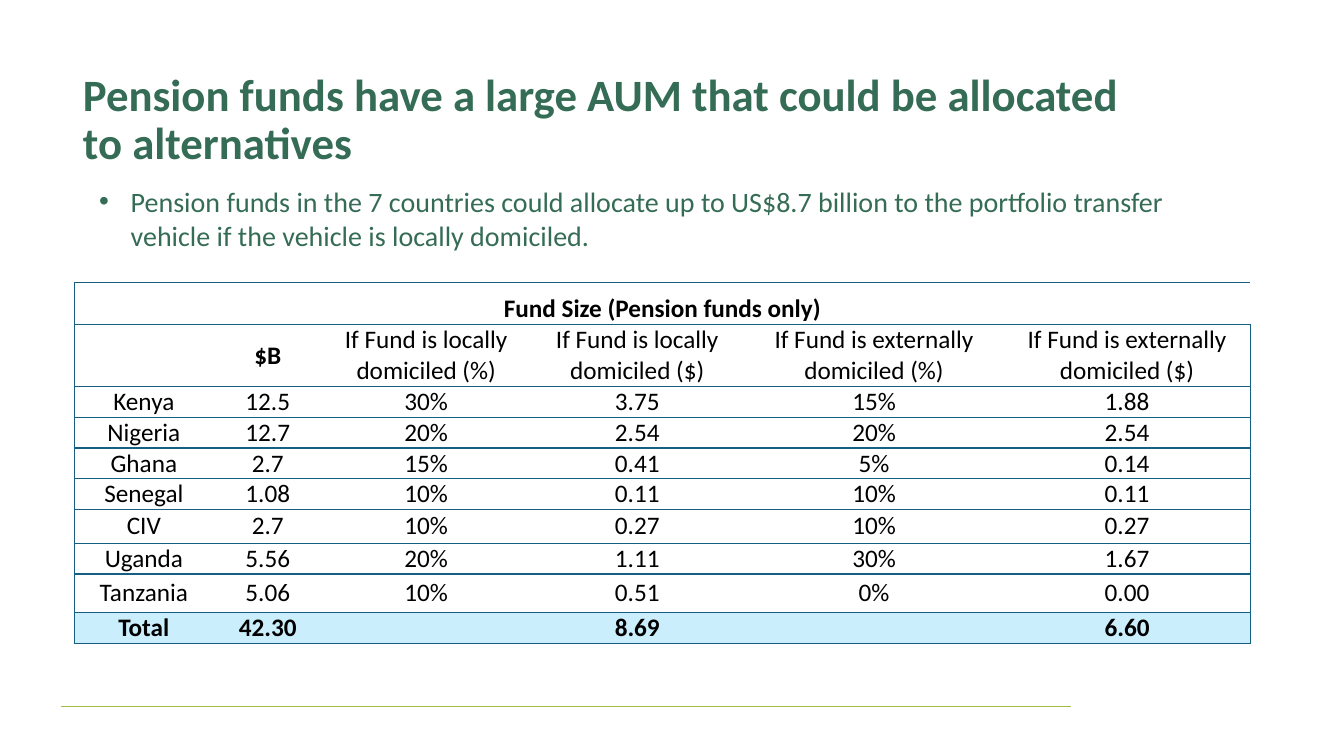
from dataclasses import dataclass

from lxml.etree import SubElement
from pptx import Presentation
from pptx.dml.color import RGBColor
from pptx.enum.shapes import MSO_CONNECTOR
from pptx.enum.text import MSO_ANCHOR, MSO_AUTO_SIZE, PP_ALIGN
from pptx.oxml import parse_xml
from pptx.oxml.ns import nsdecls, qn
from pptx.slide import Slide
from pptx.table import _Cell
from pptx.text.text import TextFrame, _Paragraph
from pptx.util import Emu, Pt

PX = 9525
COLORS = {
    "green": "356C55",
    "lime": "A0BE44",
    "blue": "156082",
    "sky": "CAEEFB",
    "white": "FFFFFF",
    "black": "000000",
}
WIDTHS = [132, 104, 198, 204, 247, 235]


@dataclass
class Row:
    high: int
    texts: list[str]
    fill: str = "white"
    bold: tuple[int, ...] = ()
    anchor: MSO_ANCHOR = MSO_ANCHOR.MIDDLE


ROWS = [
    Row(40, ["Fund Size (Pension funds only)", "", "", "", "", ""],
        bold=(0,), anchor=MSO_ANCHOR.BOTTOM),
    Row(59, ["", "$B", "If Fund is locally domiciled (%)",
             "If Fund is locally domiciled ($)",
             "If Fund is externally domiciled (%)",
             "If Fund is externally domiciled ($)"], bold=(1,)),
    Row(29, ["Kenya", "12.5", "30%", "3.75", "15%", "1.88"]),
    Row(29, ["Nigeria", "12.7", "20%", "2.54", "20%", "2.54"]),
    Row(29, ["Ghana", "2.7", "15%", "0.41", "5%", "0.14"]),
    Row(29, ["Senegal", "1.08", "10%", "0.11", "10%", "0.11"]),
    Row(32, ["CIV", "2.7", "10%", "0.27", "10%", "0.27"]),
    Row(29, ["Uganda", "5.56", "20%", "1.11", "30%", "1.67"]),
    Row(37, ["Tanzania", "5.06", "10%", "0.51", "0%", "0.00"]),
    Row(29, ["Total", "42.30", "", "8.69", "", "6.60"],
        fill="sky", bold=(0, 1, 3, 5)),
]


def px(count: int) -> Emu:
    return Emu(count * PX)


def shade(name: str) -> RGBColor:
    return RGBColor.from_string(COLORS[name])


def write(frame: TextFrame, text: str, *, size: int, color: str,
          bold: bool = False, align: PP_ALIGN = PP_ALIGN.LEFT,
          space: float = 1.0) -> _Paragraph:
    para = frame.paragraphs[0]
    para.alignment = align
    para.line_spacing = space
    if text:
        run = para.add_run()
        run.text = text
        run.font.name = "Calibri"
        run.font.size = Pt(size)
        run.font.bold = bold
        run.font.color.rgb = shade(color)
    return para


def edge(cell: _Cell, left: bool, right: bool) -> None:
    props = cell._tc.get_or_add_tcPr()
    sides = {"lnL": left, "lnR": right, "lnT": True, "lnB": True}
    for place, (tag, shown) in enumerate(sides.items()):
        fill = (f'<a:solidFill><a:srgbClr val="{COLORS["blue"]}"/></a:solidFill>'
                if shown else "<a:noFill/>")
        line = parse_xml(f'<a:{tag} {nsdecls("a")} w="{Pt(1)}">{fill}</a:{tag}>')
        props.insert(place, line)


def add_title(slide: Slide) -> None:
    title = slide.shapes.title
    title.left, title.top, title.width, title.height = map(px, (79, 69, 993, 70))
    frame = title.text_frame
    frame.word_wrap = True
    frame.auto_size = MSO_AUTO_SIZE.NONE
    frame.vertical_anchor = MSO_ANCHOR.TOP
    frame.margin_left = frame.margin_right = 0
    frame.margin_top = frame.margin_bottom = 0
    write(frame, "Pension funds have a large AUM that could be allocated to alternatives",
          size=32, color="green", bold=True, space=0.9)


def add_point(slide: Slide) -> None:
    box = slide.shapes.add_textbox(*map(px, (85, 171, 1094, 74)))
    box.text_frame.word_wrap = True
    para = write(box.text_frame,
                 "Pension funds in the 7 countries could allocate up to US$8.7 billion "
                 "to the portfolio transfer vehicle if the vehicle is locally domiciled.",
                 size=20, color="green")
    props = para._p.get_or_add_pPr()
    props.set("marL", str(px(30)))
    props.set("indent", str(px(-30)))
    SubElement(props, qn("a:buFont")).set("typeface", "Arial")
    SubElement(props, qn("a:buChar")).set("char", "•")


def add_funds(slide: Slide) -> None:
    high = sum(row.high for row in ROWS)
    table = slide.shapes.add_table(len(ROWS), len(WIDTHS), px(71), px(269),
                                   px(sum(WIDTHS)), px(high)).table
    table.first_row = table.horz_banding = False
    for column, wide in zip(table.columns, WIDTHS):
        column.width = px(wide)
    last = len(WIDTHS) - 1
    for y, row in enumerate(ROWS):
        table.rows[y].height = px(row.high)
        for x, text in enumerate(row.texts):
            cell = table.cell(y, x)
            cell.margin_left = cell.margin_right = 0
            cell.margin_top = cell.margin_bottom = 0
            cell.vertical_anchor = row.anchor
            cell.fill.solid()
            cell.fill.fore_color.rgb = shade(row.fill)
            edge(cell, x == 0, x == last)
            write(cell.text_frame, text, size=18, color="black",
                  bold=x in row.bold, align=PP_ALIGN.CENTER)
    table.cell(0, 0).merge(table.cell(0, last))


def add_rule(slide: Slide) -> None:
    rule = slide.shapes.add_connector(MSO_CONNECTOR.STRAIGHT,
                                      *map(px, (1020, 673, 58, 673)))
    rule.line.color.rgb = shade("lime")
    rule.line.width = Pt(0.6)
    SubElement(rule._element.spPr, qn("a:effectLst"))


def main() -> None:
    deck = Presentation()
    deck.slide_width, deck.slide_height = px(1280), px(720)
    slide = deck.slides.add_slide(deck.slide_layouts.get_by_name("Title Only"))
    add_rule(slide)
    add_funds(slide)
    add_title(slide)
    add_point(slide)
    deck.save("out.pptx")


if __name__ == "__main__":
    main()
